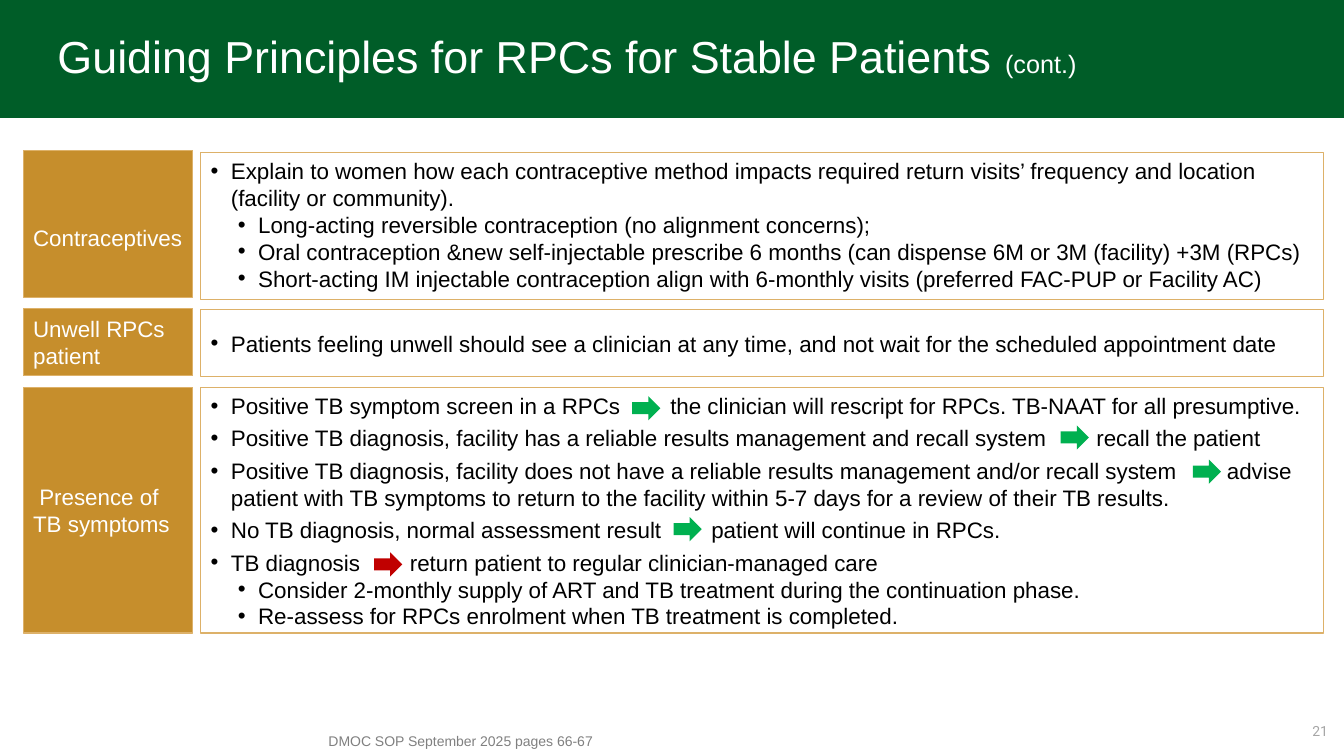
from lxml.etree import SubElement
from pptx import Presentation
from pptx.dml.color import RGBColor
from pptx.enum.shapes import MSO_SHAPE as Shape
from pptx.enum.text import MSO_ANCHOR as Anchor, MSO_AUTO_SIZE as AutoSize, PP_ALIGN as Align
from pptx.oxml.ns import qn
from pptx.util import Emu, Pt

PX = 9144  # 100 px to the inch
GREEN, GOLD, PALE_GOLD = "005D28", "C68E2C", "DDB169"
GO, STOP = "00B050", "C00000"
COMPARISON_LAYOUT = 4
ARROW_GAP = "|"

# label, label top, list top, height, list anchor, [(level, text)]
SECTIONS = [
    (" Contraceptives", 149, 151, 146, Anchor.TOP, [
        (0, "Explain to women how each contraceptive method impacts required return visits’ "
            "frequency and location (facility or community)."),
        (1, "Long-acting reversible contraception (no alignment concerns);"),
        (1, "Oral contraception &new self-injectable prescribe 6 months "
            "(can dispense 6M or 3M (facility) +3M (RPCs)"),
        (1, "Short-acting IM injectable contraception align with 6-monthly visits "
            "(preferred FAC-PUP or Facility AC)"),
    ]),
    ("Unwell RPCs patient", 306, 307, 67, Anchor.MIDDLE, [
        (0, "Patients feeling unwell should see a clinician at any time, "
            "and not wait for the scheduled appointment date"),
    ]),
    (" Presence of TB symptoms", 384, 384, 244, Anchor.TOP, [
        (0, "Positive TB symptom screen in a RPCs|the clinician will rescript for RPCs. "
            "TB-NAAT for all presumptive."),
        (0, "Positive TB diagnosis, facility has a reliable results management "
            "and recall system|recall the patient"),
        (0, "Positive TB diagnosis, facility does not have a reliable results management "
            "and/or recall system|advise patient with TB symptoms to return to the facility "
            "within 5-7 days for a review of their TB results."),
        (0, "No TB diagnosis, normal assessment result|patient will continue in RPCs."),
        (0, "TB diagnosis|return patient to regular clinician-managed care"),
        (1, "Consider 2-monthly supply of ART and TB treatment during the continuation phase."),
        (1, "Re-assess for RPCs enrolment when TB treatment is completed."),
    ]),
]
ARROWS = [(627, 393, GO), (1052, 422, GO), (1183, 456, GO), (668, 513, GO), (371, 548, STOP)]


def color(value):
    return RGBColor.from_string(value)


class SlideBuilder:
    def __init__(self, slide, font="Arial", size=16):
        self.slide, self.font, self.size = slide, font, size

    def place(self, shape, left, top, width, height):
        shape.left, shape.top = Emu(left * PX), Emu(top * PX)
        shape.width, shape.height = Emu(width * PX), Emu(height * PX)

    def style(self, run, ink, size=None, font=None):
        run.font.name, run.font.size = font or self.font, Pt(size or self.size)
        run.font.bold = False
        run.font.color.rgb = color(ink)

    def outline(self, shape):
        shape.line.color.rgb = color(PALE_GOLD)
        shape.line.width = Pt(0.75)

    def block(self, kind, box, fill):
        shape = self.slide.shapes.add_shape(kind, *(Emu(length * PX) for length in box))
        shape.shadow.inherit = False
        shape.fill.solid()
        shape.fill.fore_color.rgb = color(fill)
        shape.line.fill.background()
        return shape

    def band(self, box, fill):
        """Add a plain rectangle behind everything else."""
        shape = self.block(Shape.RECTANGLE, box, fill)
        self.slide.shapes._spTree.insert(2, shape._element)

    def title(self, box, parts):
        shape = self.slide.shapes.title
        self.place(shape, *box)
        frame = shape.text_frame
        frame.auto_size, frame.vertical_anchor = AutoSize.NONE, Anchor.MIDDLE
        paragraph = frame.paragraphs[0]
        paragraph.alignment, paragraph.line_spacing = Align.LEFT, 0.9
        for text, size in parts:
            run = paragraph.add_run()
            run.text = text
            self.style(run, "FFFFFF", size)

    def label(self, box, text):
        shape = self.block(Shape.ROUNDED_RECTANGLE, box, GOLD)
        shape.adjustments[0] = 0
        self.outline(shape)
        frame = shape.text_frame
        frame.text, frame.vertical_anchor = text, Anchor.MIDDLE
        frame.paragraphs[0].alignment = Align.LEFT
        self.style(frame.paragraphs[0].runs[0], "FFFFFF")

    def bullets(self, shape, box, anchor, items):
        self.place(shape, *box)
        self.outline(shape)
        frame = shape.text_frame
        frame.auto_size, frame.vertical_anchor = AutoSize.NONE, anchor
        for index, (level, text) in enumerate(items):
            paragraph = frame.add_paragraph() if index else frame.paragraphs[0]
            paragraph.level = level
            paragraph.space_before = Pt(4 if index and level == 0 else 0)
            properties = paragraph._p.get_or_add_pPr()
            properties.set("marL", str((20, 47)[level] * PX))
            properties.set("indent", str(-20 * PX))
            SubElement(properties, qn("a:buFont")).set("typeface", "Arial")
            SubElement(properties, qn("a:buChar")).set("char", "•")
            self.fill_item(paragraph, text)

    def fill_item(self, paragraph, text):
        """Write the text, with one widened space where an arrow stands."""
        before, gap, after = text.partition(ARROW_GAP)
        for part in filter(None, (before, gap, after)):
            run = paragraph.add_run()
            run.text = " " if part == ARROW_GAP else part
            self.style(run, "000000")
            if part == ARROW_GAP:
                run._r.get_or_add_rPr().set("spc", "3110")

    def note(self, box, text, ink, font=None, align=Align.LEFT, anchor=Anchor.TOP):
        shape = self.slide.shapes.add_textbox(*(Emu(length * PX) for length in box))
        frame = shape.text_frame
        frame.word_wrap, frame.vertical_anchor = True, anchor
        frame.text = text
        frame.paragraphs[0].alignment = align
        self.style(frame.paragraphs[0].runs[0], ink, 10, font)


def main():
    presentation = Presentation()
    presentation.slide_width, presentation.slide_height = Emu(1333 * PX), Emu(750 * PX)
    slide = presentation.slides.add_slide(presentation.slide_layouts[COMPARISON_LAYOUT])
    builder = SlideBuilder(slide)

    builder.band((0, 0, 1333, 117), GREEN)
    builder.title((47, 15, 1088, 88),
                  [("Guiding Principles for RPCs for Stable Patients ", 32), ("(cont.)", 18)])

    *bodies, spare = list(slide.placeholders)[1:]
    spare._element.getparent().remove(spare._element)
    for body, (label, label_top, top, height, anchor, items) in zip(bodies, SECTIONS):
        builder.bullets(body, (199, top, 1114, height), anchor, items)
        builder.label((23, label_top, 168, height), label)

    for left, top, fill in ARROWS:
        builder.block(Shape.RIGHT_ARROW, (left, top, 28, 24), fill)

    builder.note((316, 722, 630, 28), "DMOC SOP September 2025 pages 66-67", "808080")
    builder.note((1027, 705, 300, 40), "21", "A6A6A6", "Roboto", Align.RIGHT, Anchor.MIDDLE)
    presentation.save("out.pptx")


if __name__ == "__main__":
    main()
